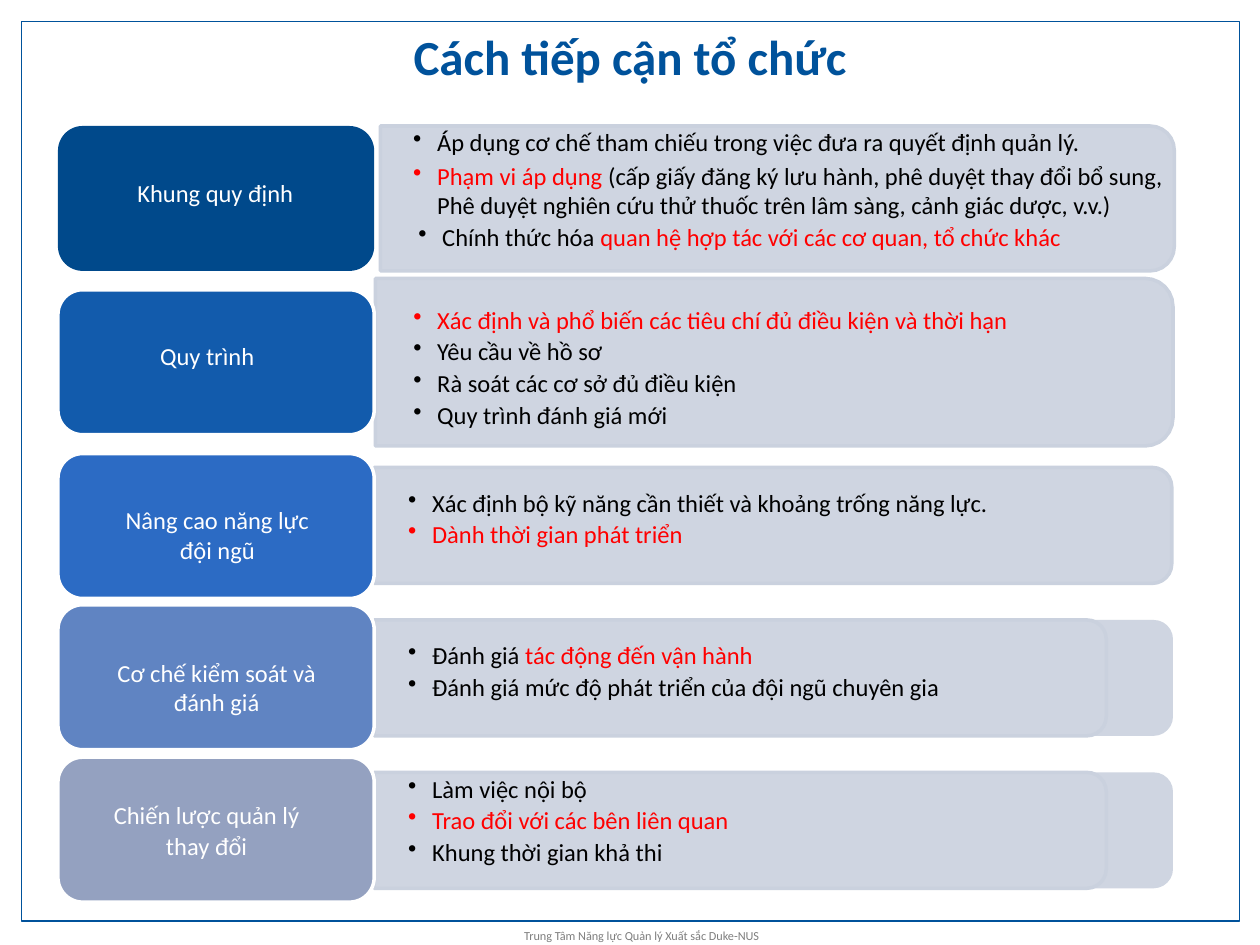
import math
from lxml import etree
from pptx import Presentation, util as u
from pptx.dml.color import RGBColor
from pptx.enum import shapes, text as t
from pptx.oxml import ns

Inches, Pt = u.Inches, u.Pt

COLORS = {
    "blue": "00529B", "panel": "CAD1DE", "white": "FFFFFF",
    "black": "000000", "red": "FF0000", "gray": "7E7E7E",
}

# Label: text, box, fill, format. Panel: top, height, left, width, outline width.
# Points: text box, then (line, space before, indent); * switches to red and back.
ROWS = [
    dict(top=1.0, fill="00498B", label="Khung quy định",
         box=(1.09, 1.4, 2.03, 0.25), fmt={},
         panel=(3.02, 1.0, 6.3, 1.15), edge=6.3, area=(3.27, 0.98, 6.03, 1.27),
         points=[
             ("Áp dụng cơ chế tham chiếu trong việc đưa ra quyết định quản lý.", 0, 0.2),
             ("*Phạm vi áp dụng* (cấp giấy đăng ký lưu hành, phê duyệt thay đổi bổ sung, "
              "Phê duyệt nghiên cứu thử thuốc trên lâm sàng, cảnh giác dược, v.v.)", 2.3, 0.2),
             ("Chính thức hóa *quan hệ hợp tác với các cơ quan, tổ chức khác", 1.4, 0.24)]),
    dict(top=2.3, fill="125BAC", label="Quy trình",
         box=(1.27, 2.7, 0.91, 0.25), fmt={},
         panel=(2.98, 2.21, 6.33, 1.33), edge=6.33, area=(3.27, 2.39, 5.55, 1.03),
         points=[
             ("*Xác định và phổ biến các tiêu chí đủ điều kiện và thời hạn", 0, 0.2),
             ("Yêu cầu về hồ sơ", 1.1, 0.2),
             ("Rà soát các cơ sở đủ điều kiện", 1.3, 0.2),
             ("Quy trình đánh giá mới", 1.4, 0.2)]),
    dict(top=3.6, fill="2C6BC4", label="Nâng cao năng lực đội ngũ",
         box=(0.88, 4.0, 1.69, 0.48), fmt=dict(center=True),
         panel=(2.97, 3.71, 6.33, 0.92), edge=6.33, area=(3.23, 3.84, 4.7, 0.52),
         points=[
             ("Xác định bộ kỹ năng cần thiết và khoảng trống năng lực.", 0, 0.2),
             ("*Dành thời gian phát triển", 1.4, 0.2)]),
    dict(top=4.8, fill="6084C2", label="Cơ chế kiểm soát và đánh giá",
         box=(0.74, 5.21, 1.96, 0.48), fmt=dict(center=True),
         panel=(2.97, 4.92, 6.34, 0.92), edge=5.81, area=(3.23, 5.05, 5.02, 0.52),
         points=[
             ("Đánh giá *tác động đến vận hành", 0, 0.2),
             ("Đánh giá mức độ phát triển của đội ngũ chuyên gia", 1.4, 0.2)]),
    dict(top=6.01, fill="94A1C0", label="Chiến lược quản lý thay đổi",
         box=(0.75, 6.3, 1.78, 0.55), fmt=dict(center=True, inset=0.04, lead=17.5),
         panel=(2.97, 6.13, 6.34, 0.92), edge=5.81, area=(3.23, 6.11, 4.85, 0.77),
         points=[
             ("Làm việc nội bộ", 0, 0.2),
             ("*Trao đổi với các bên liên quan", 1.4, 0.2),
             ("Khung thời gian khả thi", 1.2, 0.2)]),
]


def rgb(name):
    return RGBColor.from_string(COLORS.get(name, name))


def paint(shape, fill=None, line=None, width=2):
    shape.shadow.inherit = False
    if fill:
        shape.fill.solid()
        shape.fill.fore_color.rgb = rgb(fill)
    else:
        shape.fill.background()
    if line:
        shape.line.color.rgb = rgb(line)
        shape.line.width = Pt(width)
    else:
        shape.line.fill.background()


def fade(shape, share):
    color = shape.fill._xPr.find(".//" + ns.qn("a:srgbClr"))
    etree.SubElement(color, ns.qn("a:alpha")).set("val", str(share * 1000))


def bullet(para, left):
    props = para._p.get_or_add_pPr()
    props.set("marL", str(Inches(left)))
    props.set("indent", str(Inches(-0.19)))
    etree.SubElement(props, ns.qn("a:buChar")).set("char", "•")


def write(slide, points, box, size=14, color="black", bold=False,
          center=False, inset=0.01, lead=None, bullets=False):
    """Add a text box; points is a string or a list of (line, gap, indent)."""
    frame = slide.shapes.add_textbox(*map(Inches, box)).text_frame
    frame.word_wrap = True
    frame.auto_size = t.MSO_AUTO_SIZE.SHAPE_TO_FIT_TEXT
    frame.margin_left = frame.margin_right = frame.margin_bottom = 0
    frame.margin_top = Inches(inset)
    if isinstance(points, str):
        points = [(points, 0, 0)]
    for i, (line, gap, left) in enumerate(points):
        para = frame.add_paragraph() if i else frame.paragraphs[0]
        if bullets:
            bullet(para, left)
        if center:
            para.alignment = t.PP_ALIGN.CENTER
        if gap:
            para.space_before = Pt(gap)
        if lead:
            para.line_spacing = Pt(lead)
        for j, part in enumerate(line.split("*")):
            if part:
                run = para.add_run()
                run.text = part
                font = run.font
                font.name, font.size, font.bold = "Calibri", Pt(size), bold
                font.color.rgb = rgb("red" if j % 2 else color)


def panel(slide, left, top, wide, high):
    """Add a box whose two right corners are round."""
    rad = high / 6
    right, base = left + wide, top + high
    turns = [math.radians(a) for a in range(0, 91, 15)]
    upper = [(right - rad + rad * math.sin(a), top + rad - rad * math.cos(a))
             for a in turns]
    lower = [(x, top + base - y) for x, y in reversed(upper)]
    form = slide.shapes.build_freeform(Inches(left), Inches(top))
    form.add_line_segments([(Inches(x), Inches(y)) for x, y in
                            upper + lower + [(left, base)]], close=True)
    return form.convert_to_shape()


def row(slide, item):
    # Panel with its points
    left, top, wide, high = item["panel"]
    back = panel(slide, left, top, wide, high)
    paint(back, fill="panel")
    fade(back, 90)
    paint(panel(slide, left, top, item["edge"], high), line="panel")
    write(slide, item["points"], item["area"], inset=0.03, bullets=True)

    # Label
    tab = slide.shapes.add_shape(
        shapes.MSO_SHAPE.ROUNDED_RECTANGLE,
        *map(Inches, (0.46, item["top"], 2.51, 1.15)))
    tab.adjustments[0] = 0.17
    paint(tab, fill=item["fill"], line="white" if item is not ROWS[0] else None)
    write(slide, item["label"], item["box"], color="white", **item["fmt"])


def main():
    deck = Presentation()
    deck.slide_width, deck.slide_height = Inches(10), Inches(7.5)
    slide = deck.slides.add_slide(deck.slide_layouts[6])

    # Frame and title
    frame = slide.shapes.add_shape(shapes.MSO_SHAPE.RECTANGLE,
                                   *map(Inches, (0.17, 0.17, 9.67, 7.14)))
    paint(frame, line="blue", width=0.75)
    write(slide, "Cách tiếp cận tổ chức", (1.31, 0.2, 7.38, 0.49),
          size=28, color="blue", bold=True, center=True)

    # Rows
    for item in ROWS:
        row(slide, item)

    # Footer
    write(slide, "Trung Tâm Năng lực Quản lý Xuất sắc Duke-NUS",
          (4.16, 7.36, 1.95, 0.12), size=7, color="gray", inset=0, lead=8.7)
    deck.save("out.pptx")


if __name__ == "__main__":
    main()
